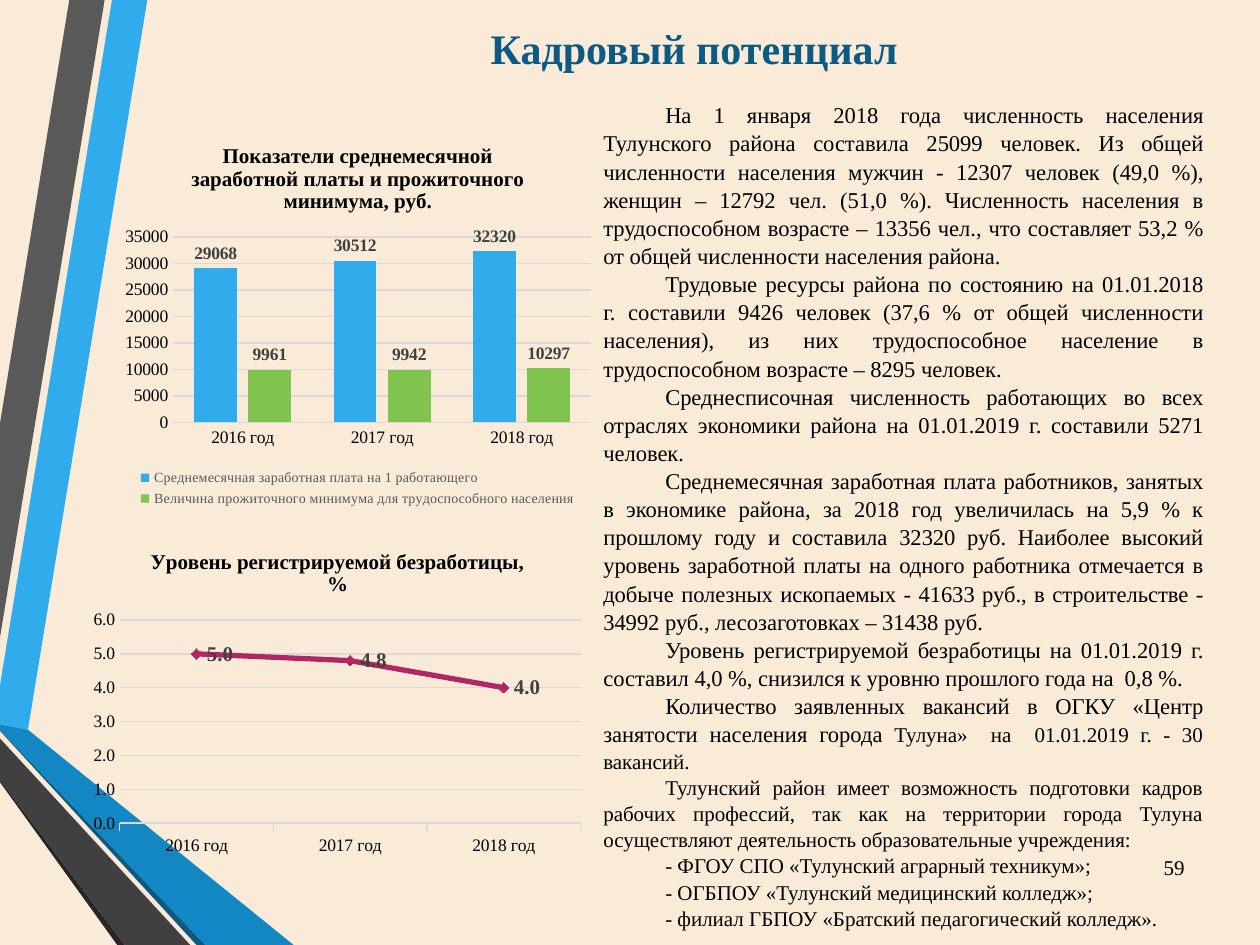
from lxml.etree import SubElement
from pptx import Presentation
from pptx.chart.data import CategoryChartData
from pptx.dml.color import RGBColor
from pptx.enum.chart import (XL_CHART_TYPE, XL_LABEL_POSITION, XL_LEGEND_POSITION,
                             XL_MARKER_STYLE, XL_TICK_MARK)
from pptx.enum.text import MSO_ANCHOR, PP_ALIGN
from pptx.oxml import parse_xml
from pptx.oxml.ns import nsdecls, qn
from pptx.util import Pt

FONT = "Times New Roman"
COLORS = {
    "back": "F9EBD8", "sky": "30ACEC", "gray": "595959", "coal": "262626",
    "navy": "0C5A82", "blue": "1287C3", "dark": "404040", "black": "000000",
    "grid": "D9D9D9", "green": "80C34F", "plum": "AF2764", "red": "C00000",
}
BANDS = [
    ("sky", [(0, 391.7), (0, 414), (16, 417), (84.2, 0), (64, 0)]),
    ("gray", [(59.8, 0), (39.6, 0), (0, 242), (0, 364.3)]),
    ("coal", [(0, 445.7), (0, 447), (67, 540), (71.3, 540)]),
    ("navy", [(0, 417), (0, 417.6), (112.3, 540), (117.4, 540)]),
    ("blue", [(0, 417), (117.4, 540), (167.8, 540), (16, 417), (0, 414)]),
    ("dark", [(0, 445.7), (71.3, 540), (108.7, 540), (0, 422)]),
]
TITLE = "Кадровый потенциал"
BIG, SMALL = 12.9, 12
BODY = [
    [("На 1 января 2018 года численность населения Тулунского района составила 25099 человек. Из общей численности населения мужчин - 12307 человек (49,0 %), женщин – 12792 чел. (51,0 %). Численность населения в трудоспособном возрасте – 13356 чел., что составляет 53,2 % от общей численности населения района.", BIG)],
    [("Трудовые ресурсы района по состоянию на 01.01.2018 г. составили 9426 человек (37,6 % от общей численности населения), из них трудоспособное население в трудоспособном возрасте – 8295 человек.", BIG)],
    [("Среднесписочная численность работающих во всех отраслях экономики района на 01.01.2019 г. составили 5271 человек.", BIG)],
    [("Среднемесячная заработная плата работников, занятых в экономике района, за 2018 год увеличилась на 5,9 % к прошлому году и составила 32320 руб. Наиболее высокий уровень заработной платы на одного работника отмечается в добыче полезных ископаемых - 41633 руб., в строительстве - 34992 руб., лесозаготовках – 31438 руб.", BIG)],
    [("Уровень регистрируемой безработицы на 01.01.2019 г. составил 4,0 %, снизился к уровню прошлого года на  0,8 %.", BIG)],
    [("Количество заявленных вакансий в ОГКУ «Центр занятости населения города ", BIG),
     ("Тулуна»  на  01.01.2019 г. - 30 вакансий.", SMALL)],
    [("Тулунский район имеет возможность подготовки кадров рабочих профессий, так как на территории города Тулуна осуществляют деятельность образовательные учреждения:", SMALL)],
    [("- ФГОУ СПО «Тулунский аграрный техникум»;", SMALL)],
    [("- ОГБПОУ «Тулунский медицинский колледж»;", SMALL)],
    [("- филиал ГБПОУ «Братский педагогический колледж».", SMALL)],
]
YEARS = ["2016 год", "2017 год", "2018 год"]
PAY = {
    "title": "Показатели среднемесячной заработной платы и прожиточного минимума, руб.",
    "kind": XL_CHART_TYPE.COLUMN_CLUSTERED,
    "box": (65.5, 71.3, 278, 221), "plot": (0.12, 0.29, 0.86, 0.48),
    "top": 35000, "step": 5000, "fmt": "General", "tick": XL_TICK_MARK.NONE,
    "size": 10, "spot": XL_LABEL_POSITION.OUTSIDE_END,
    "rows": [
        ("Среднемесячная заработная плата на 1 работающего", [29068, 30512, 32320], "sky"),
        ("Величина прожиточного минимума для трудоспособного населения", [9961, 9942, 10297], "green"),
    ],
}
JOBS = {
    "title": "Уровень регистрируемой безработицы, %",
    "kind": XL_CHART_TYPE.LINE_MARKERS_STACKED,
    "box": (48.2, 303.8, 289.4, 187.2), "plot": (0.07, 0.27, 0.91, 0.62),
    "top": 6, "step": 1, "fmt": "0.0", "tick": XL_TICK_MARK.OUTSIDE,
    "size": 12, "spot": XL_LABEL_POSITION.RIGHT,
    "rows": [("Series 1", [5, 4.8, 4], "plum")],
}


def rgb(name):
    return RGBColor.from_string(COLORS[name])


def style(font, size, color="black", bold=False):
    font.name, font.size, font.bold = FONT, Pt(size), bold
    font.color.rgb = rgb(color)


def add_band(slide, color, dots):
    dots = [(Pt(x), Pt(y)) for x, y in dots]
    pen = slide.shapes.build_freeform(*dots[0])
    pen.add_line_segments(dots[1:], close=True)
    band = pen.convert_to_shape()
    band.shadow.inherit = False
    band.fill.solid()
    band.fill.fore_color.rgb = rgb(color)
    band.line.fill.background()


def add_text(slide, box, paras, align, color="black", bold=False, indent=0, space=1.0):
    frame = slide.shapes.add_textbox(*map(Pt, box)).text_frame
    frame.word_wrap = True
    frame.vertical_anchor = MSO_ANCHOR.MIDDLE
    frame.text = "\n".join("" for _ in paras)
    for para, parts in zip(frame.paragraphs, paras):
        para.alignment, para.line_spacing = align, space
        if indent:
            para._p.get_or_add_pPr().set("indent", str(Pt(indent)))
        for words, size in parts:
            run = para.add_run()
            run.text = words
            style(run.font, size, color, bold)


def set_plot(chart, plot):
    area = chart.element.find(".//" + qn("c:plotArea"))
    for old in area.findall(qn("c:layout")):
        area.remove(old)
    layout = parse_xml(f"<c:layout {nsdecls('c')}><c:manualLayout/></c:layout>")
    pairs = [("layoutTarget", "inner"), ("xMode", "edge"), ("yMode", "edge"),
             *zip("xywh", plot)]
    for tag, val in pairs:
        SubElement(layout[0], qn("c:" + tag)).set("val", str(val))
    area.insert(0, layout)
    clear = parse_xml(f"<c:spPr {nsdecls('c', 'a')}><a:noFill/><a:ln><a:noFill/></a:ln></c:spPr>")
    chart.element.find(qn("c:chart")).addnext(clear)


def set_line(line):
    line.color.rgb = rgb("grid")
    line.width = Pt(0.75)


def add_graph(slide, info):
    data = CategoryChartData(number_format=info["fmt"])
    data.categories = YEARS
    for name, vals, _ in info["rows"]:
        data.add_series(name, vals)
    chart = slide.shapes.add_chart(info["kind"], *map(Pt, info["box"]), data).chart
    chart.font.name, chart.font.size = "Calibri", Pt(10)
    chart.font.color.rgb = rgb("black")
    chart.has_legend = False
    chart.has_title = True
    head = chart.chart_title
    head.text_frame.text = info["title"]
    style(head.text_frame.paragraphs[0].runs[0].font, 12, bold=True)
    head.include_in_layout = False
    set_plot(chart, info["plot"])
    cat, val = chart.category_axis, chart.value_axis
    for axis in (cat, val):
        style(axis.tick_labels.font, 10)
        axis.major_tick_mark = axis.minor_tick_mark = XL_TICK_MARK.NONE
    cat.major_tick_mark = info["tick"]
    set_line(cat.format.line)
    val.format.line.fill.background()
    val.has_major_gridlines = True
    set_line(val.major_gridlines.format.line)
    val.minimum_scale, val.maximum_scale, val.major_unit = 0, info["top"], info["step"]
    val.tick_labels.number_format = info["fmt"]
    val.tick_labels.number_format_is_linked = False
    plot = chart.plots[0]
    plot.vary_by_categories = False
    for row, (_, _, color) in zip(plot.series, info["rows"]):
        labels = row.data_labels
        labels.show_value = True
        labels.position = info["spot"]
        labels.number_format, labels.number_format_is_linked = info["fmt"], False
        style(labels.font, info["size"], "dark", True)
    return chart


def main():
    deck = Presentation()
    deck.slide_width, deck.slide_height = Pt(720), Pt(540)
    slide = deck.slides.add_slide(deck.slide_layouts[6])
    slide.background.fill.solid()
    slide.background.fill.fore_color.rgb = rgb("back")
    for color, dots in BANDS:
        add_band(slide, color, dots)
    add_text(slide, (76.3, 0, 640.8, 54.7), [[(TITLE, 24)]], PP_ALIGN.CENTER, "navy", True)
    add_text(slide, (337.7, 49, 357.1, 491), BODY, PP_ALIGN.JUSTIFY, indent=35.4, space=1.04)
    add_text(slide, (650.2, 481, 33.8, 28.8), [[("59", 12)]], PP_ALIGN.RIGHT)

    pay = add_graph(slide, PAY)
    bars = pay.plots[0]
    bars.gap_width, bars.overlap = 100, -27
    for row, (_, _, color) in zip(bars.series, PAY["rows"]):
        row.format.fill.solid()
        row.format.fill.fore_color.rgb = rgb(color)
    pay.has_legend = True
    pay.legend.position = XL_LEGEND_POSITION.BOTTOM
    pay.legend.include_in_layout = False
    style(pay.legend.font, 8, "gray")

    curve = add_graph(slide, JOBS).plots[0].series[0]
    curve.smooth = False
    curve.format.line.color.rgb = rgb("plum")
    curve.format.line.width = Pt(3)
    mark = curve.marker
    mark.style, mark.size = XL_MARKER_STYLE.DIAMOND, 6
    mark.format.fill.solid()
    mark.format.fill.fore_color.rgb = rgb("red")
    mark.format.line.color.rgb = rgb("plum")
    deck.save("out.pptx")


if __name__ == "__main__":
    main()
